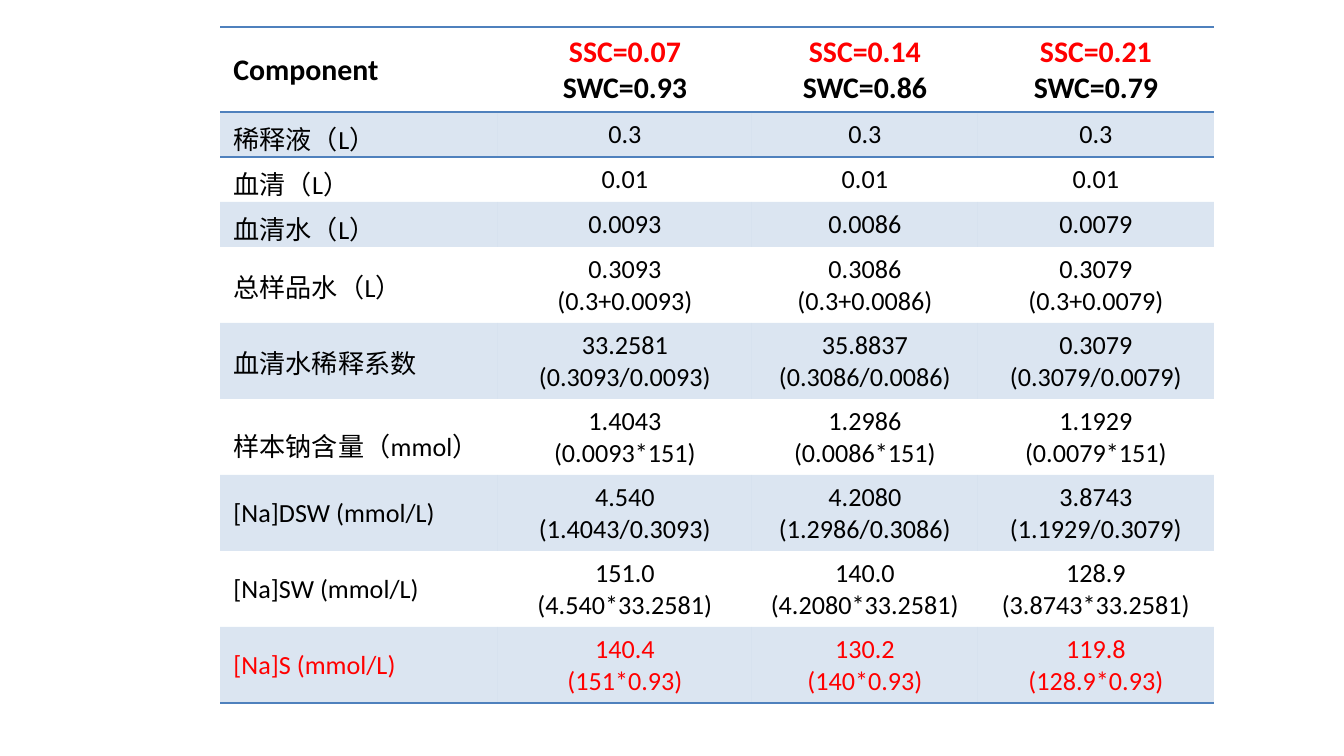
from dataclasses import dataclass

from lxml.etree import SubElement
from pptx import Presentation
from pptx.dml.color import RGBColor
from pptx.enum.text import MSO_ANCHOR, PP_ALIGN
from pptx.oxml import parse_xml
from pptx.oxml.ns import nsdecls, qn
from pptx.table import _Cell
from pptx.util import Pt

EMU_PER_PX = 914400 / 134.4
BLACK, RED, BLUE = "000000", "FF0000", "4F81BD"
NO_STYLE = "{2D5ABB26-0587-4C30-8999-92F81FD0307C}"
TABLE_LEFT, TABLE_TOP = 220, 27
COLUMN_WIDTHS = (278, 254, 226, 236)
HEADER_HEIGHT, SINGLE_HEIGHT, DOUBLE_HEIGHT = 85, 45, 76
BOTTOM_MARGIN, TIGHT_MARGIN, OVERFLOW_MARGIN = 5, -1, -9


@dataclass(frozen=True)
class Row:
    """A label and its values; each value is a tuple of lines."""
    label: str
    values: tuple[tuple[str, ...], ...]
    height: int = DOUBLE_HEIGHT
    label_margin: int = BOTTOM_MARGIN
    colors: tuple[str, str] = (BLACK, BLACK)
    label_color: str = BLACK
    size: int = 14
    bold: bool = False
    borders: tuple[str, ...] = ()


ROWS = (
    Row("Component",
        (("SSC=0.07", "SWC=0.93"), ("SSC=0.14", "SWC=0.86"), ("SSC=0.21", "SWC=0.79")),
        HEADER_HEIGHT, colors=(RED, BLACK), size=16, bold=True, borders=("lnT", "lnB")),
    Row("稀释液（L）", (("0.3",), ("0.3",), ("0.3",)), SINGLE_HEIGHT, TIGHT_MARGIN,
        borders=("lnT",)),
    Row("血清（L）", (("0.01",), ("0.01",), ("0.01",)), SINGLE_HEIGHT, TIGHT_MARGIN),
    Row("血清水（L）", (("0.0093",), ("0.0086",), ("0.0079",)), SINGLE_HEIGHT, TIGHT_MARGIN),
    Row("总样品水（L）",
        (("0.3093", "(0.3+0.0093)"), ("0.3086", "(0.3+0.0086)"), ("0.3079", "(0.3+0.0079)"))),
    Row("血清水稀释系数",
        (("33.2581", "(0.3093/0.0093)"), ("35.8837", "(0.3086/0.0086)"),
         ("0.3079", "(0.3079/0.0079)"))),
    Row("样本钠含量（mmol）",
        (("1.4043", "(0.0093*151)"), ("1.2986", "(0.0086*151)"), ("1.1929", "(0.0079*151)")),
        label_margin=OVERFLOW_MARGIN),
    Row("[Na]DSW (mmol/L)",
        (("4.540", "(1.4043/0.3093)"), ("4.2080", "(1.2986/0.3086)"),
         ("3.8743", "(1.1929/0.3079)"))),
    Row("[Na]SW (mmol/L)",
        (("151.0", "(4.540*33.2581)"), ("140.0", "(4.2080*33.2581)"),
         ("128.9", "(3.8743*33.2581)"))),
    Row("[Na]S (mmol/L)",
        (("140.4", "(151*0.93)"), ("130.2", "(140*0.93)"), ("119.8", "(128.9*0.93)")),
        colors=(RED, RED), label_color=RED, borders=("lnB",)),
)


def px(length: int) -> int:
    return round(length * EMU_PER_PX)


def rgb(color: str) -> RGBColor:
    return RGBColor.from_string(color)


def write_lines(cell: _Cell, lines: tuple[str, ...], colors: tuple[str, ...],
                alignment: PP_ALIGN, row: Row) -> None:
    font_format = {"name": "Calibri", "size": Pt(row.size), "bold": row.bold}
    frame = cell.text_frame
    frame.text = "\n".join(lines)
    for paragraph, color in zip(frame.paragraphs, colors):
        paragraph.alignment = alignment
        font = paragraph.runs[0].font
        for attribute, value in font_format.items():
            setattr(font, attribute, value)
        font.color.rgb = rgb(color)


def style_cell(cell: _Cell, banded: bool, borders: tuple[str, ...]) -> None:
    """Give the cell its translucent band and its border lines."""
    properties = cell._tc.get_or_add_tcPr()
    if banded:
        cell.fill.solid()
        cell.fill.fore_color.rgb = rgb(BLUE)
        SubElement(properties.find(".//" + qn("a:srgbClr")), qn("a:alpha"), val="20000")
    else:
        cell.fill.background()
    for position, side in enumerate(borders):
        properties.insert(position, parse_xml(
            f'<a:{side} {nsdecls("a")} w="{Pt(1)}"><a:solidFill>'
            f'<a:srgbClr val="{BLUE}"/></a:solidFill></a:{side}>'))


def main() -> None:
    presentation = Presentation()
    presentation.slide_width, presentation.slide_height = px(1344), px(756)
    slide = presentation.slides.add_slide(presentation.slide_layouts[6])
    table = slide.shapes.add_table(
        len(ROWS), len(COLUMN_WIDTHS), px(TABLE_LEFT), px(TABLE_TOP),
        px(sum(COLUMN_WIDTHS)), px(sum(row.height for row in ROWS))).table
    table.first_row = table.horz_banding = False
    table._tbl.tblPr.find(qn("a:tableStyleId")).text = NO_STYLE

    for column, width in zip(table.columns, COLUMN_WIDTHS):
        column.width = px(width)
    for index, row in enumerate(ROWS):
        table.rows[index].height = px(row.height)
        label_cell, *value_cells = table.rows[index].cells
        write_lines(label_cell, (row.label,), (row.label_color,), PP_ALIGN.LEFT, row)
        label_cell.vertical_anchor = MSO_ANCHOR.MIDDLE
        label_cell.margin_bottom = px(row.label_margin)
        for cell, lines in zip(value_cells, row.values):
            write_lines(cell, lines, row.colors, PP_ALIGN.CENTER, row)
            cell.margin_bottom = px(BOTTOM_MARGIN)
        for cell in (label_cell, *value_cells):
            style_cell(cell, index % 2 == 1, row.borders)
    presentation.save("out.pptx")


if __name__ == "__main__":
    main()
